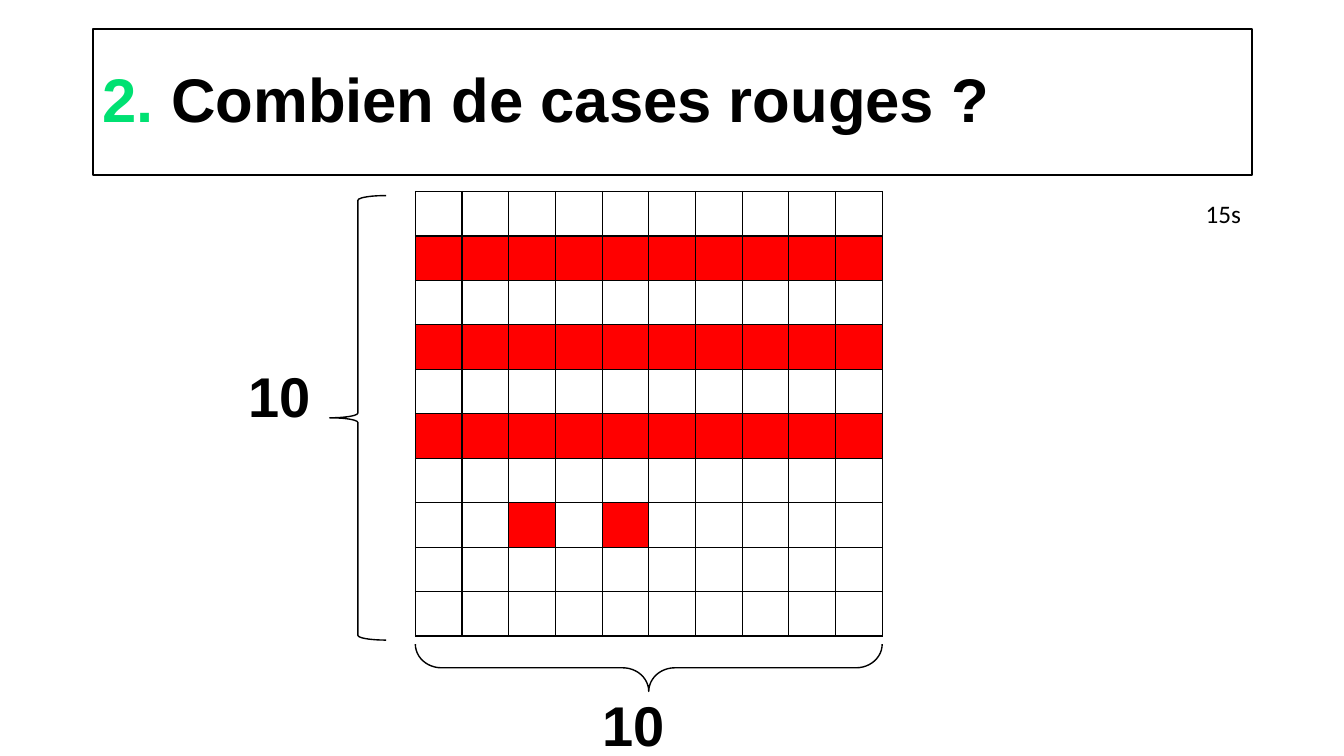
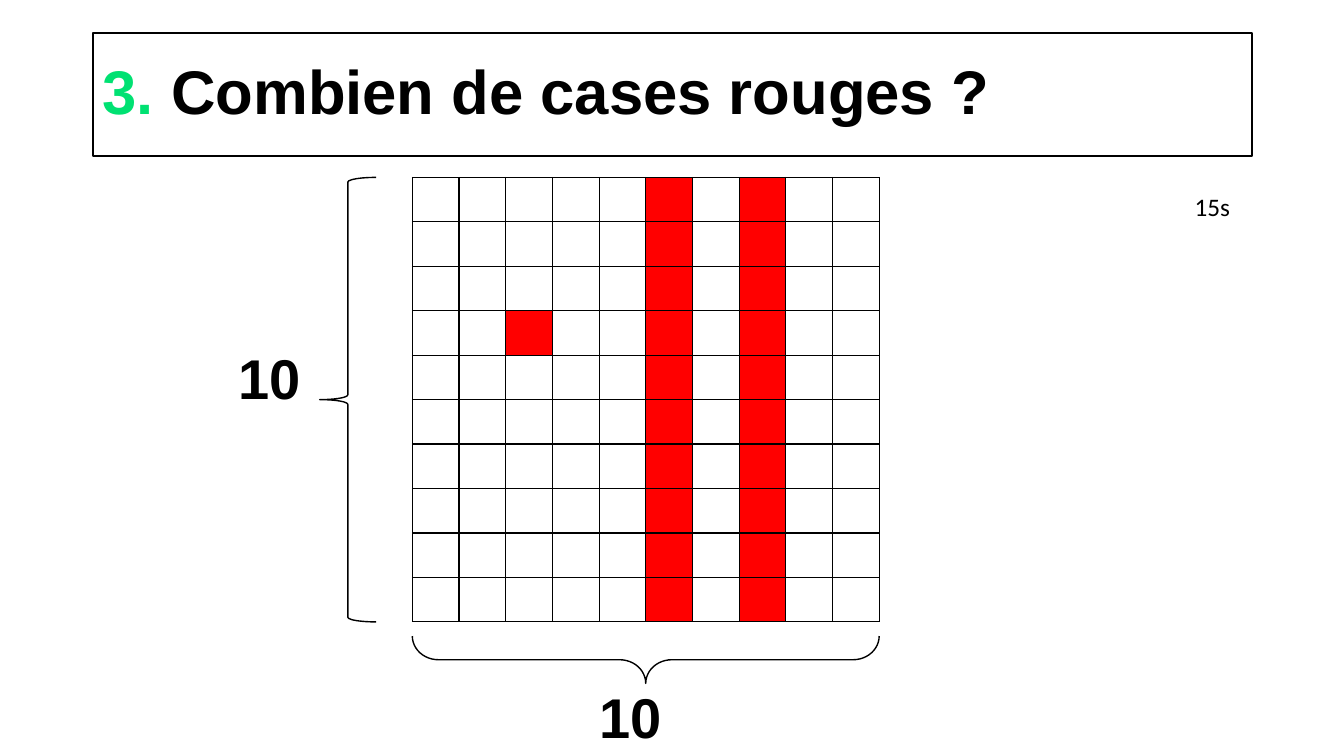
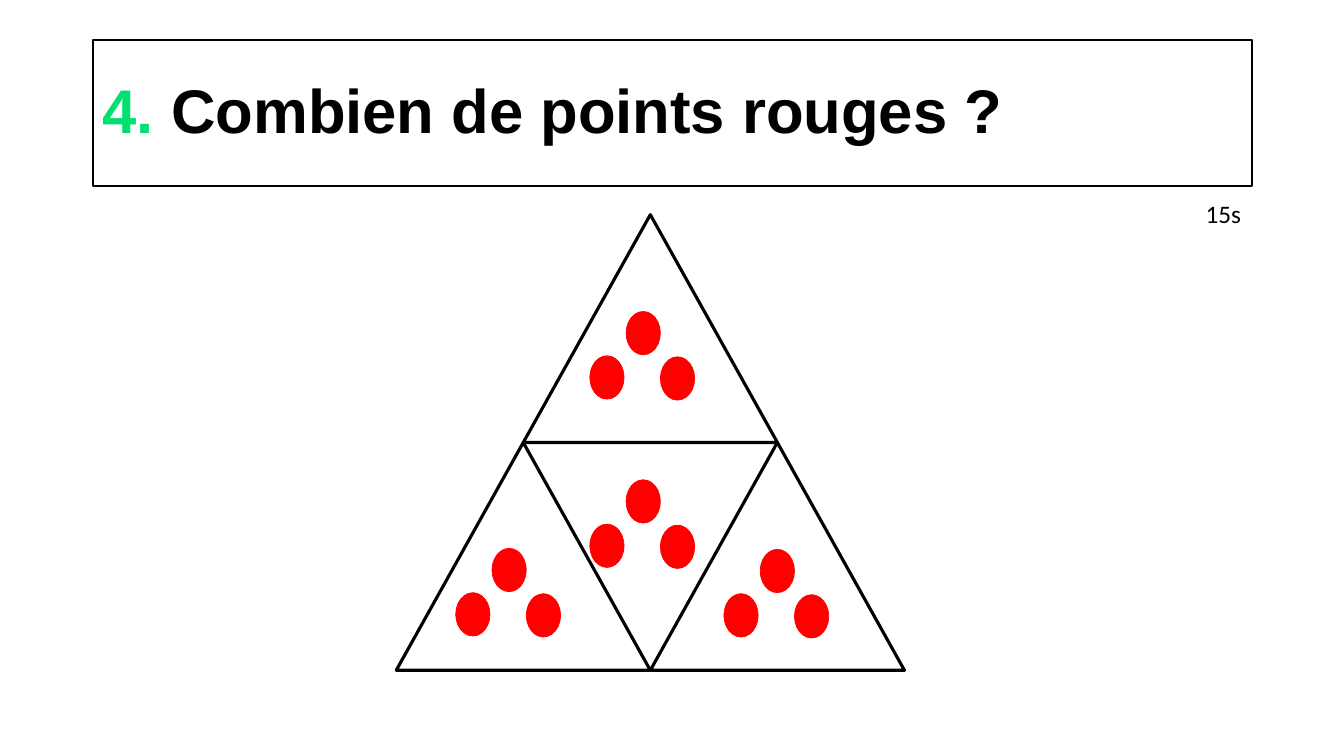
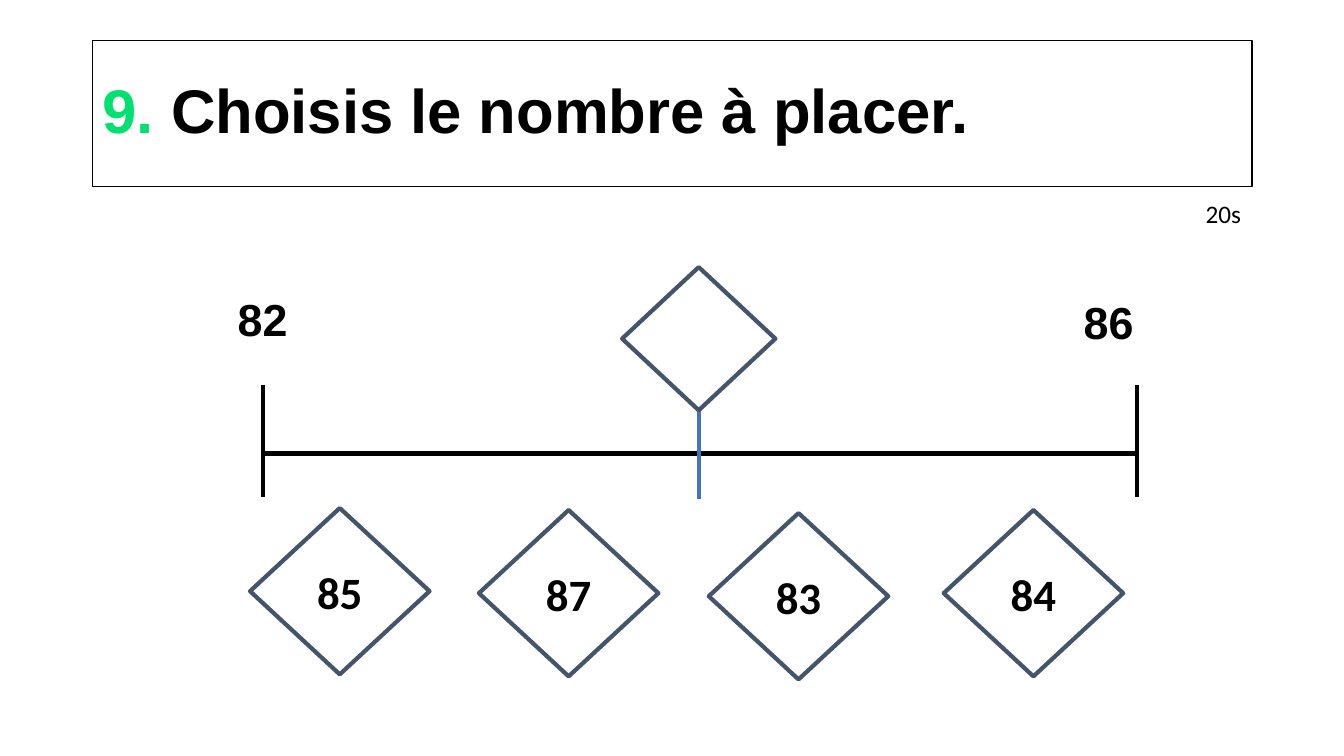
from dataclasses import dataclass

from lxml import etree
from pptx import Presentation
from pptx import util as u
from pptx.dml.color import RGBColor
from pptx.enum import shapes, text
from pptx.oxml import ns


@dataclass(frozen=True)
class Theme:
    black: str = "000000"
    white: str = "FFFFFF"
    red: str = "FF0000"
    green: str = "00E172"
    slate: str = "44546A"
    blue: str = "4472C4"
    heading_font: str = "Arial"
    body_font: str = "Calibri"
    title_size: int = 44
    count_size: int = 40
    number_size: int = 32
    timer_size: int = 18


THEME = Theme()
CELLS = 10
GRID_WIDTH, GRID_HEIGHT = 4.63, 4.41


def rgb(color):
    return RGBColor.from_string(color)


def write(paragraph, content, *, size, font=THEME.heading_font,
          color=THEME.black, bold=True, align=text.PP_ALIGN.LEFT):
    """Append formatted text to a paragraph."""
    paragraph.alignment = align
    run = paragraph.add_run()
    run.text = content
    run.font.size = u.Pt(size)
    run.font.name = font
    run.font.bold = bold
    run.font.color.rgb = rgb(color)


class Deck:
    def __init__(self, theme):
        self.theme = theme
        self.presentation = Presentation()
        self.presentation.slide_width = u.Inches(13.33)
        self.presentation.slide_height = u.Inches(7.5)
        self.slide = None

    def new_slide(self):
        layout = self.presentation.slide_layouts[6]
        self.slide = self.presentation.slides.add_slide(layout)

    def shape(self, kind, left, top, width, height, *, line, weight, fill=None):
        shape = self.slide.shapes.add_shape(
            kind, *map(u.Inches, (left, top, width, height)))
        shape.shadow.inherit = False
        if fill:
            shape.fill.solid()
            shape.fill.fore_color.rgb = rgb(fill)
        else:
            shape.fill.background()
        shape.line.color.rgb = rgb(line)
        shape.line.width = u.Pt(weight)
        return shape

    def title(self, number, question, top=0.4, height=1.45, weight=1.5):
        box = self.shape(shapes.MSO_SHAPE.RECTANGLE, 0.92, top, 11.5, height,
                         line=self.theme.black, weight=weight)
        frame = box.text_frame
        frame.word_wrap = True
        frame.vertical_anchor = text.MSO_ANCHOR.MIDDLE
        paragraph = frame.paragraphs[0]
        paragraph.line_spacing = 0.9
        size = self.theme.title_size
        write(paragraph, f"{number}. ", size=size, color=self.theme.green)
        write(paragraph, question, size=size)

    def label(self, content, left, top, width, height, *, wrap=False, **style):
        box = self.slide.shapes.add_textbox(
            *map(u.Inches, (left, top, width, height)))
        frame = box.text_frame
        frame.word_wrap = wrap
        frame.auto_size = text.MSO_AUTO_SIZE.SHAPE_TO_FIT_TEXT
        write(frame.paragraphs[0], content, **style)

    def timer(self, content, left=11.86, top=1.92):
        self.label(content, left, top, 0.56, 0.4, size=self.theme.timer_size,
                   font=self.theme.body_font, bold=False)

    def line(self, start, end, color):
        connector = self.slide.shapes.add_connector(
            shapes.MSO_CONNECTOR.STRAIGHT, *map(u.Inches, (*start, *end)))
        connector.line.color.rgb = rgb(color)
        connector.line.width = u.Pt(3)
        etree.SubElement(connector.element.spPr, ns.qn("a:effectLst"))

    def border(self, cell):
        properties = cell._tc.get_or_add_tcPr()
        for index, side in enumerate(("lnL", "lnR", "lnT", "lnB")):
            edge = etree.Element(ns.qn(f"a:{side}"), w=str(u.Pt(1)))
            fill = etree.SubElement(edge, ns.qn("a:solidFill"))
            etree.SubElement(fill, ns.qn("a:srgbClr"), val=self.theme.black)
            properties.insert(index, edge)

    def grid(self, left, top, is_red):
        table = self.slide.shapes.add_table(
            CELLS, CELLS,
            *map(u.Inches, (left, top, GRID_WIDTH, GRID_HEIGHT))).table
        table.first_row = table.horz_banding = False
        for row in range(CELLS):
            for column in range(CELLS):
                cell = table.cell(row, column)
                cell.fill.solid()
                cell.fill.fore_color.rgb = rgb(
                    self.theme.red if is_red(row, column) else self.theme.white)
                self.border(cell)

    def side_brace(self, left, top):
        self.shape(shapes.MSO_SHAPE.LEFT_BRACE, left, top, 0.56, GRID_HEIGHT,
                   line=self.theme.black, weight=1)
        self.label(str(CELLS), left - 0.9, top + 1.6, 0.83, 0.77,
                   size=self.theme.count_size)

    def bottom_brace(self, left, top):
        depth = 0.47
        shift = (GRID_WIDTH - depth) / 2  # the frame turns about its centre
        brace = self.shape(shapes.MSO_SHAPE.LEFT_BRACE, left + shift,
                           top - shift, depth, GRID_WIDTH,
                           line=self.theme.black, weight=1)
        brace.rotation = 270
        brace.adjustments[0] = 0.55
        self.label(str(CELLS), left + 1.76, top + 0.41, 0.83, 0.77,
                   size=self.theme.count_size)

    def dots(self, left, top):
        for across, down in ((0, 0), (0.7, 0.01), (0.36, -0.44)):
            self.shape(shapes.MSO_SHAPE.OVAL, left + across, top + down,
                       0.34, 0.43, line=self.theme.red, weight=0.5,
                       fill=self.theme.red)

    def diamond(self, left, top, width=1.78, height=1.65, content=None):
        shape = self.shape(shapes.MSO_SHAPE.DIAMOND, left, top, width, height,
                           line=self.theme.slate, weight=3)
        if content:
            frame = shape.text_frame
            frame.vertical_anchor = text.MSO_ANCHOR.MIDDLE
            write(frame.paragraphs[0], content, size=self.theme.number_size,
                  font=self.theme.body_font, align=text.PP_ALIGN.CENTER)


def red_rows(deck):
    deck.new_slide()
    deck.title(2, "Combien de cases rouges ?", top=0.29)
    deck.grid(4.12, 1.9, lambda row, column: row in (1, 3, 5)
              or (row == 7 and column in (2, 4)))
    deck.side_brace(3.27, 1.94)
    deck.bottom_brace(4.12, 6.39)
    deck.timer("15s")


def red_columns(deck):
    deck.new_slide()
    deck.title(3, "Combien de cases rouges ?", top=0.33, height=1.22)
    deck.grid(4.09, 1.76, lambda row, column: column in (5, 7)
              or (row, column) == (3, 2))
    deck.side_brace(3.17, 1.76)
    deck.bottom_brace(4.09, 6.31)
    deck.timer("15s", left=11.75, top=1.85)


def red_dots(deck):
    deck.new_slide()
    deck.title(4, "Combien de points rouges ?")
    # One triangle above two, leaving a fourth in the middle
    width, height = 2.52, 2.26
    left, top = 3.93, 2.13
    for column, row in ((0.5, 0), (0, 1), (1, 1)):
        deck.shape(shapes.MSO_SHAPE.ISOSCELES_TRIANGLE, left + column * width,
                   top + row * height, width, height,
                   line=deck.theme.black, weight=2.25)
    for place in ((4.52, 5.88), (5.85, 3.53), (5.85, 5.2), (7.18, 5.89)):
        deck.dots(*place)
    deck.timer("15s")


def number_line(deck):
    deck.new_slide()
    deck.title(9, "Choisis le nombre à placer.", weight=1)
    # Scale with its two ends
    start, end, level = 2.61, 11.28, 4.5
    deck.line((start, level), (end, level), deck.theme.black)
    for position in (start, end):
        deck.line((position, 3.82), (position, 4.93), deck.theme.black)
    for content, left, top, width in (("82", 1.95, 2.84, 1.31),
                                      ("86", 10.36, 2.87, 1.27)):
        deck.label(content, left, top, width, 0.64, wrap=True,
                   size=deck.theme.number_size, align=text.PP_ALIGN.CENTER)
    # Place to fill in
    deck.line((6.93, 4.04), (6.93, 4.95), deck.theme.blue)
    deck.diamond(6.17, 2.65, 1.52, 1.42)
    # Choices
    for content, left, top in (("85", 2.48, 5.04), ("87", 4.75, 5.06),
                               ("83", 7.03, 5.09), ("84", 9.36, 5.06)):
        deck.diamond(left, top, content=content)
    deck.timer("20s")


def main():
    deck = Deck(THEME)
    for build in (red_rows, red_columns, red_dots, number_line):
        build(deck)
    deck.presentation.save("out.pptx")


if __name__ == "__main__":
    main()
